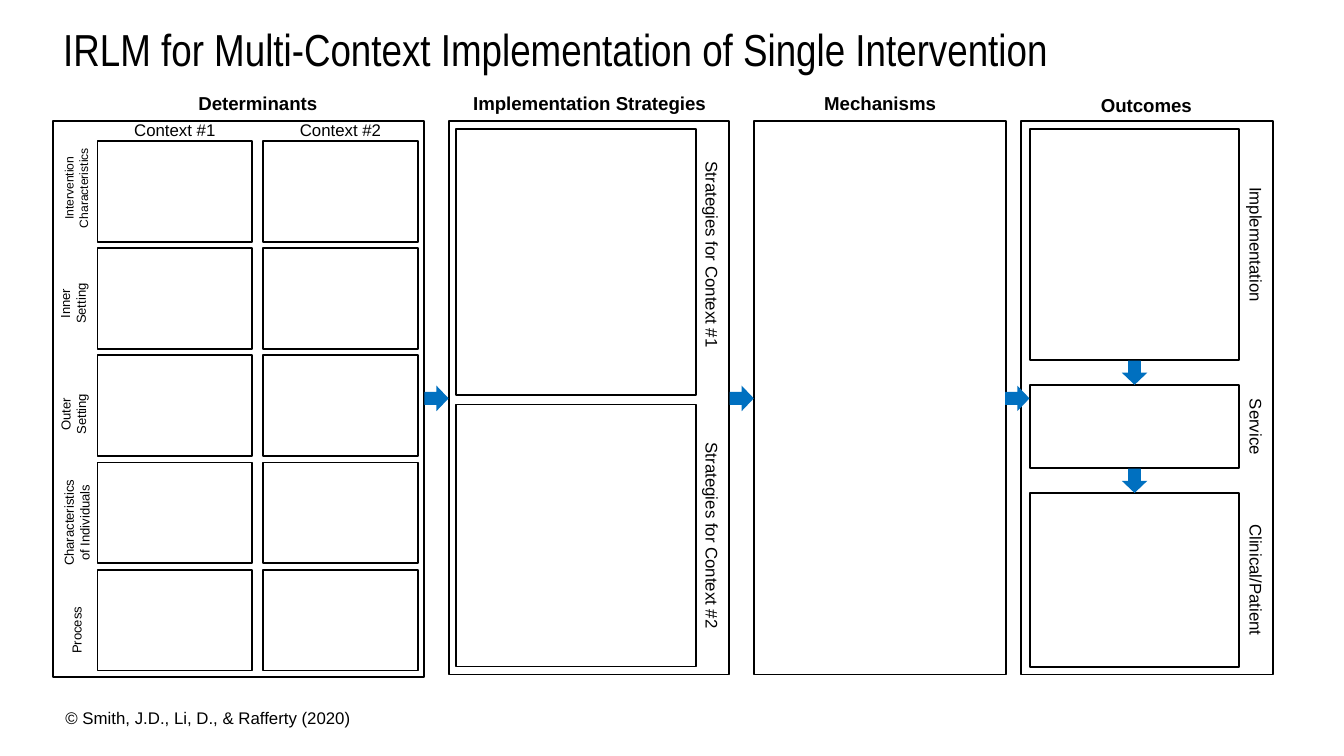
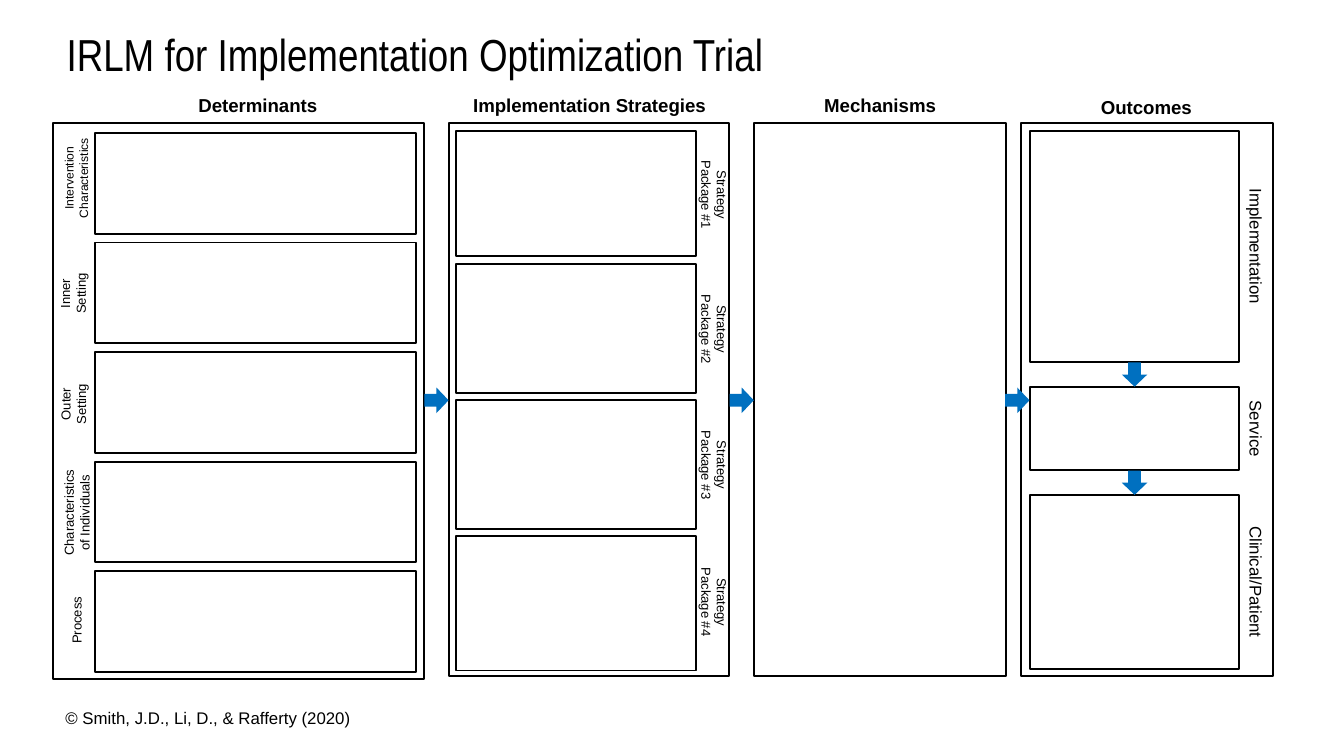
from pptx import Presentation
from pptx.dml.color import RGBColor
from pptx.enum.shapes import MSO_SHAPE
from pptx.enum.text import MSO_ANCHOR, PP_ALIGN
from pptx.util import Pt

RECTANGLE, ARROW = MSO_SHAPE.RECTANGLE, MSO_SHAPE.RIGHT_ARROW
LEFT, CENTER = PP_ALIGN.LEFT, PP_ALIGN.CENTER
TOP, MIDDLE = MSO_ANCHOR.TOP, MSO_ANCHOR.MIDDLE
BLACK = RGBColor(0x00, 0x00, 0x00)
BLUE = RGBColor(0x00, 0x70, 0xC0)

FOOTER = "© Smith, J.D., Li, D., & Rafferty (2020)"
ARROW_WIDTH, ARROW_HEIGHT = 13, 13.7
PANEL_TOP, HEADING_TOP = 64.8, 45.8

# heading, heading left, heading width, heading drop, panel left, width, height
PANELS = [
    ("Determinants", 70.8, 134.6, 0, 28.6, 198.6, 298),
    ("Implementation Strategies", 240.5, 150.5, 0, 240.4, 150.4, 296.6),
    ("Mechanisms", 405.2, 132.5, 0, 403.9, 135.2, 296.6),
    ("Outcomes", 546.8, 134.6, 0.8, 546.8, 135, 296.6),
]
FLOW_ARROWS = [227.3, 390.8, 538.5]
FLOW_ARROW_TOP = 206.6

# label, size, centre across, centre down, length
DETERMINANTS = [
    ("Intervention\nCharacteristics", 6.5, 40.7, 100.8, 60),
    ("Inner\nSetting", 7, 39, 162.7, 60.5),
    ("Outer\nSetting", 7, 39.2, 221.8, 61),
    ("Characteristics\nof Individuals", 7, 41, 280.1, 67.7),
    ("Process", 7, 41, 337.7, 53.3),
]
DETERMINANT_HEIGHT = 54
STRATEGY_LEFT, STRATEGY_WIDTH = 244.1, 129

# label, box top, box height
OUTCOMES = [
    ("Implementation", 69.1, 123.8),
    ("Service", 206.4, 44.6),
    ("Clinical/Patient", 264.2, 93),
]
OUTCOME_LEFT, OUTCOME_WIDTH, OUTCOME_LABEL = 552, 111.6, 673

SLIDES = [
    {
        "title": "IRLM for Multi-Context Implementation of Single Intervention",
        "title_at": (26.8, 11.5),
        "drop": 0,
        "contexts": ["Context #1", "Context #2"],
        "columns": [52.2, 141],
        "column_width": 82.8,
        "first_row": 75.6,
        "row_pitch": 57.4,
        "label_shift": 0,
        # label, box top, box height, label centre, label length
        "strategies": [
            ("Strategies for Context #1", 69.1, 142.6, 136.4, 134),
            ("Strategies for Context #2", 216.7, 140.4, 287, 139),
        ],
        "strategy_size": 9,
        "strategy_label": 381.6,
    },
    {
        "title": "IRLM for Implementation Optimization Trial",
        "title_at": (28.6, 13.9),
        "drop": 1,
        "contexts": [],
        "columns": [50.8],
        "column_width": 172.2,
        "first_row": 71.2,
        "row_pitch": 58.7,
        "label_shift": -5.4,
        "strategies": [
            ("Strategy\nPackage #1", 70.4, 67, 104.4, 66),
            ("Strategy\nPackage #2", 141.5, 69.1, 176.4, 69),
            ("Strategy\nPackage #3", 214.5, 69.1, 249.1, 69),
            ("Strategy\nPackage #4", 287.3, 72, 322.6, 71),
        ],
        "strategy_size": 7,
        "strategy_label": 382.7,
    },
]


def add_text(page, text, left, top, width, height, size, font="Arial",
             bold=False, align=CENTER, anchor=TOP, wrap=True, spacing=None):
    box = page.shapes.add_textbox(Pt(left), Pt(top), Pt(width), Pt(height))
    frame = box.text_frame
    frame.word_wrap = wrap
    frame.vertical_anchor = anchor
    para = frame.paragraphs[0]
    para.alignment = align
    para.line_spacing = spacing
    for number, line in enumerate(text.split("\n")):
        if number:
            para.add_line_break()
        span = para.add_run()
        span.text = line
        span.font.name = font
        span.font.size = Pt(size)
        span.font.bold = bold
        span.font.color.rgb = BLACK
    return box


def add_side_label(page, text, size, across, down, length, angle):
    """Add a turned label centred on the given point."""
    lines = text.count("\n") + 1
    thickness = 7.2 + 1.2 * size * lines
    box = add_text(page, text, across - length / 2, down - thickness / 2,
                   length, thickness, size, anchor=MIDDLE)
    box.text_frame.margin_left = box.text_frame.margin_right = Pt(0)
    box.rotation = angle


def add_frame(page, left, top, width, height):
    """Add an empty rectangle with a black outline."""
    frame = page.shapes.add_shape(RECTANGLE, Pt(left), Pt(top), Pt(width), Pt(height))
    frame.shadow.inherit = False
    frame.fill.background()
    frame.line.color.rgb = BLACK
    frame.line.width = Pt(1)


def add_arrow(page, left, top, angle=0):
    arrow = page.shapes.add_shape(ARROW, Pt(left), Pt(top),
                                  Pt(ARROW_WIDTH), Pt(ARROW_HEIGHT))
    arrow.shadow.inherit = False
    arrow.fill.solid()
    arrow.fill.fore_color.rgb = BLUE
    arrow.line.fill.background()
    arrow.rotation = angle


def add_panels(page, drop):
    for heading, left, width, extra, panel_left, panel_width, height in PANELS:
        add_text(page, heading, left, HEADING_TOP + extra + drop, width, 19.4,
                 10, bold=True)
        add_frame(page, panel_left, PANEL_TOP + drop, panel_width, height)


def add_determinants(page, content):
    for context, left in zip(content["contexts"], content["columns"]):
        add_text(page, context, left, 60.5, content["column_width"], 18, 9)
    for row, (label, size, across, down, length) in enumerate(DETERMINANTS):
        add_side_label(page, label, size, across, down + content["label_shift"],
                       length, 270)
        top = content["first_row"] + row * content["row_pitch"]
        for left in content["columns"]:
            add_frame(page, left, top, content["column_width"], DETERMINANT_HEIGHT)


def add_strategies(page, content):
    for label, top, height, down, length in content["strategies"]:
        add_frame(page, STRATEGY_LEFT, top, STRATEGY_WIDTH, height)
        add_side_label(page, label, content["strategy_size"],
                       content["strategy_label"], down, length, 90)


def add_outcomes(page, drop):
    for label, top, height in OUTCOMES:
        add_frame(page, OUTCOME_LEFT, top + drop, OUTCOME_WIDTH, height)
        add_side_label(page, label, 9, OUTCOME_LABEL, top + drop + height / 2,
                       height, 90)
    arrow_left = OUTCOME_LEFT + (OUTCOME_WIDTH - ARROW_WIDTH) / 2
    for (_, top, height), (_, next_top, _) in zip(OUTCOMES, OUTCOMES[1:]):
        middle = (top + height + next_top) / 2 + drop
        add_arrow(page, arrow_left, middle - ARROW_HEIGHT / 2, 90)


def build_page(deck, content):
    page = deck.slides.add_slide(deck.slide_layouts[6])
    drop = content["drop"]
    add_text(page, FOOTER, 28, 375.4, 168.5, 18, 9, align=LEFT, wrap=False)
    add_text(page, content["title"], *content["title_at"], 665, 33.1, 24,
             font="Arial Narrow", align=LEFT, anchor=MIDDLE, spacing=0.9)
    add_panels(page, drop)
    add_determinants(page, content)
    add_strategies(page, content)
    add_outcomes(page, drop)
    for left in FLOW_ARROWS:
        add_arrow(page, left, FLOW_ARROW_TOP + drop)


def main():
    deck = Presentation()
    deck.slide_width, deck.slide_height = Pt(720), Pt(405)
    for content in SLIDES:
        build_page(deck, content)
    deck.save("out.pptx")


if __name__ == "__main__":
    main()
